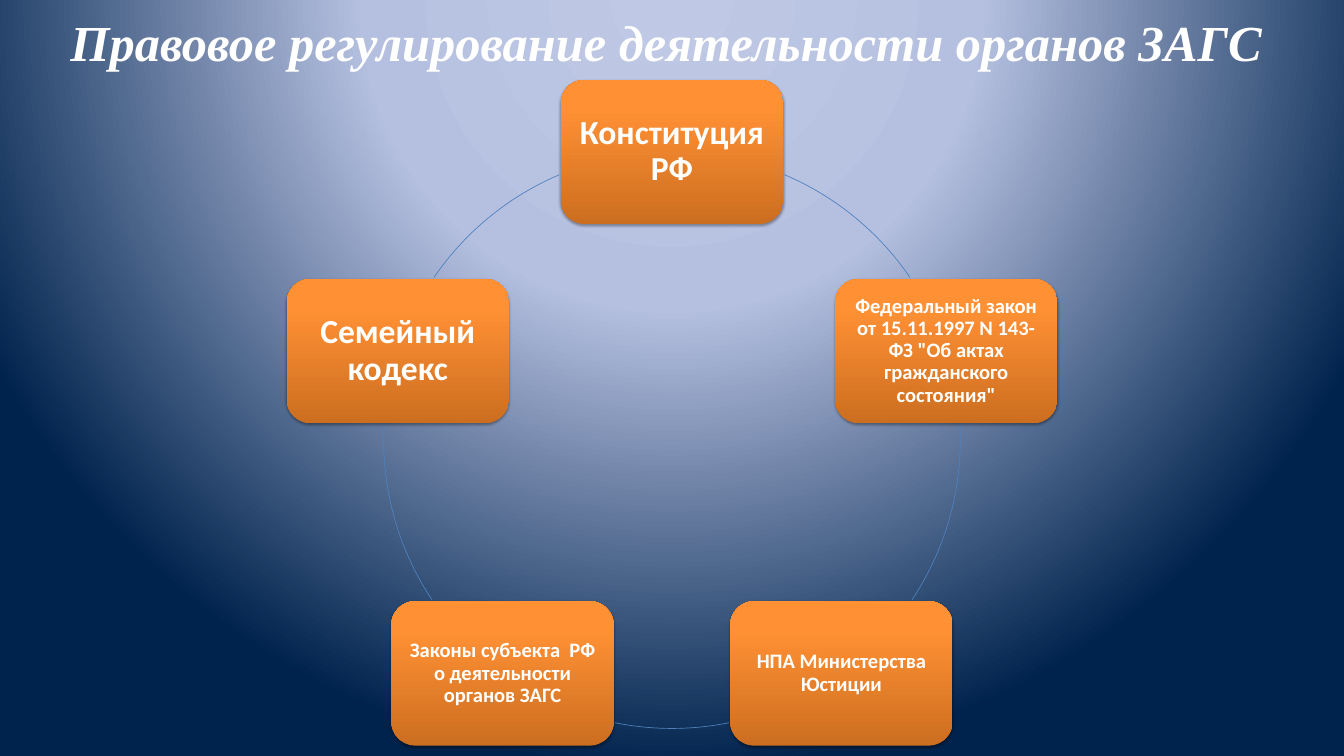
from math import cos, radians, sin

from lxml.etree import SubElement
from pptx import Presentation
from pptx.dml.color import RGBColor
from pptx.enum.shapes import MSO_SHAPE
from pptx.enum.text import MSO_ANCHOR, PP_ALIGN
from pptx.oxml.ns import qn
from pptx.util import Inches, Pt

COLORS = {
    "white": "FFFFFF",
    "ring": "4F81BD",
    "shadow": "000000",
    "sky": "BFC9E5",
    "haze": "B5C0E0",
    "navy": "00234D",
    "rust": "CC6E20",
    "orange": "FF9034",
    "amber": "FF9136",
}
BACKGROUND_STOPS = [(0, "sky"), (40, "haze"), (100, "navy")]
BOX_STOPS = [(0, "rust"), (80, "orange"), (100, "amber")]
CENTER_X, CENTER_Y, RADIUS = 10, 6.55, 4.29
BOX_WIDTH, BOX_HEIGHT = 3.31, 2.15

SOURCES = [
    ("Конституция РФ", 36, 0.15),
    ('Федеральный закон от 15.11.1997 N 143-ФЗ "Об актах гражданского состояния"', 22, 0.09),
    ("НПА Министерства Юстиции", 22, 0.09),
    ("Законы субъекта  РФ о деятельности органов ЗАГС", 22, 0.09),
    ("Семейный кодекс", 36, 0.15),
]
ARCS = [(23, 55.6), (87.1, 123.6), (168.6, 191.4), (236.4, 272.9), (304.4, 337)]


def rgb(name):
    return RGBColor.from_string(COLORS[name])


def write_stops(gradient, stops):
    for child in list(gradient):
        gradient.remove(child)
    stop_list = SubElement(gradient, qn("a:gsLst"))
    for position, name in stops:
        stop = SubElement(stop_list, qn("a:gs"), pos=str(position * 1000))
        SubElement(stop, qn("a:srgbClr"), val=COLORS[name])


def paint_background(page):
    page.background.fill.gradient()
    gradient = page._element.find(".//" + qn("a:gradFill"))
    write_stops(gradient, BACKGROUND_STOPS)
    shade = SubElement(gradient, qn("a:path"), path="circle")
    SubElement(shade, qn("a:fillToRect"), l="50000", t="-80000", r="50000", b="180000")


def paint_box(box):
    box.fill.gradient()
    gradient = box._element.spPr.find(qn("a:gradFill"))
    write_stops(gradient, BOX_STOPS)
    SubElement(gradient, qn("a:lin"), ang="16200000", scaled="0")
    box.line.fill.background()


def cast_shadow(box):
    box.shadow.inherit = False
    effects = box._element.spPr.find(qn("a:effectLst"))
    shadow = SubElement(effects, qn("a:outerShdw"), blurRad=str(Pt(3.1)),
                        dist=str(Pt(1.8)), dir="5400000", rotWithShape="0")
    color = SubElement(shadow, qn("a:srgbClr"), val=COLORS["shadow"])
    SubElement(color, qn("a:alpha"), val="35000")


def add_span(para, text, size, font, italic=False):
    para.alignment = PP_ALIGN.CENTER
    span = para.add_run()
    span.text = text
    span.font.size = Pt(size)
    span.font.name = font
    span.font.bold = True
    span.font.italic = italic
    span.font.color.rgb = rgb("white")


def set_title(page, text):
    title = page.shapes.title
    title.left, title.top = Inches(0), Inches(0.12)
    title.width, title.height = Inches(19.83), Inches(1.01)
    title.text_frame.vertical_anchor = MSO_ANCHOR.TOP
    add_span(title.text_frame.paragraphs[0], text, 54, "Times New Roman", italic=True)


def add_source_box(page, angle, text, size, margin):
    left = CENTER_X + RADIUS * sin(radians(angle)) - BOX_WIDTH / 2
    top = CENTER_Y - RADIUS * cos(radians(angle)) - BOX_HEIGHT / 2
    box = page.shapes.add_shape(MSO_SHAPE.ROUNDED_RECTANGLE, Inches(left), Inches(top),
                                Inches(BOX_WIDTH), Inches(BOX_HEIGHT))
    paint_box(box)
    cast_shadow(box)
    frame = box.text_frame
    frame.word_wrap = True
    frame.vertical_anchor = MSO_ANCHOR.MIDDLE
    frame.margin_left = frame.margin_right = Inches(margin)
    frame.margin_top = frame.margin_bottom = Inches(margin)
    para = frame.paragraphs[0]
    para.line_spacing = 0.9
    add_span(para, text, size, "Calibri")


def add_ring_arc(page, start, end):
    arc = page.shapes.add_shape(MSO_SHAPE.ARC, Inches(CENTER_X - RADIUS),
                                Inches(CENTER_Y - RADIUS),
                                Inches(2 * RADIUS), Inches(2 * RADIUS))
    for index, angle in enumerate((start, end)):
        arc.adjustments[index] = (angle - 90) % 360 * 0.6
    arc.fill.background()
    arc.line.color.rgb = rgb("ring")
    arc.line.width = Pt(0.75)
    arc.shadow.inherit = False


def main():
    deck = Presentation()
    deck.slide_width, deck.slide_height = Inches(20), Inches(11.25)
    page = deck.slides.add_slide(deck.slide_layouts[5])
    paint_background(page)
    set_title(page, "Правовое регулирование деятельности органов ЗАГС")
    step = 360 / len(SOURCES)
    for index, (source, arc) in enumerate(zip(SOURCES, ARCS)):
        add_source_box(page, index * step, *source)
        add_ring_arc(page, *arc)
    deck.save("out.pptx")


if __name__ == "__main__":
    main()
